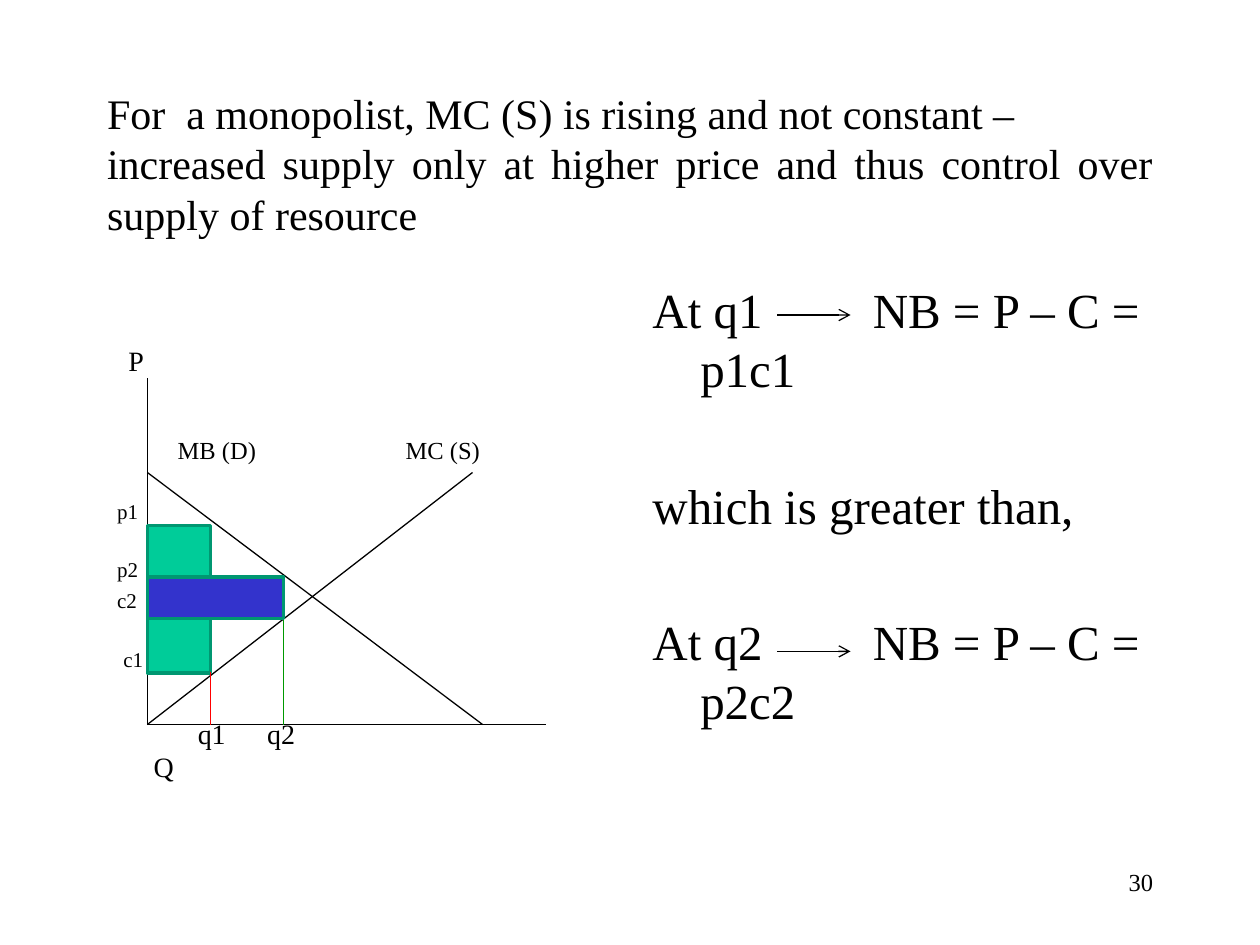
from lxml import etree
from pptx import Presentation, util as u
from pptx.dml.color import RGBColor
from pptx.enum import shapes, text
from pptx.oxml import ns

INK = {"black": "000000", "green": "009900", "red": "FF0000",
       "mint": "00CC99", "blue": "3333CC", "edge": "009771"}
LEFT, JUST, RIGHT = (text.PP_ALIGN.LEFT, text.PP_ALIGN.JUSTIFY,
                     text.PP_ALIGN.RIGHT)
TOP, MID = text.MSO_ANCHOR.TOP, text.MSO_ANCHOR.MIDDLE


def tint(name):
    """Return the named colour."""
    return RGBColor.from_string(INK[name])


def write(para, words, size=28, font="Times New Roman", ink="black", track=0):
    """Add a formatted run to a paragraph."""
    run = para.add_run()
    run.text = words
    run.font.size = u.Pt(size)
    run.font.name = font
    run.font.color.rgb = tint(ink)
    if track:
        run.font._element.set("spc", str(track * 100))


class Page:
    """Hold the line style and the current slide."""

    def __init__(self, deck, thin=0.75, thick=2):
        """Add a title-only slide to the deck."""
        self.slide = deck.slides.add_slide(deck.slide_layouts[5])
        self.thin, self.thick = u.Pt(thin), u.Pt(thick)

    def frame(self, shape, anchor=TOP, inset=(0.1, 0.05), wrap=True):
        """Set up and return the text frame of a shape."""
        frame = shape.text_frame
        frame.word_wrap = wrap
        frame.auto_size = text.MSO_AUTO_SIZE.NONE
        frame.vertical_anchor = anchor
        frame.margin_left = frame.margin_right = u.Inches(inset[0])
        frame.margin_top = frame.margin_bottom = u.Inches(inset[1])
        return frame

    def title(self, lines, box, size=24):
        """Place the title and write its lines."""
        shape = self.slide.shapes.title
        shape.left, shape.top, shape.width, shape.height = map(u.Inches, box)
        frame = self.frame(shape, MID)
        for i, line in enumerate(lines):
            para = frame.paragraphs[0] if i == 0 else frame.add_paragraph()
            para.alignment = JUST
            para.space_before = u.Pt(0)
            write(para, line, size)

    def box(self, spot, **style):
        """Add a text box and return its frame."""
        shape = self.slide.shapes.add_textbox(*map(u.Inches, spot))
        return self.frame(shape, **style)

    def label(self, words, x, y, size):
        """Add a one-line label centred on a height."""
        frame = self.box((x, y - 0.15, 0.7, 0.3), anchor=MID,
                         inset=(0, 0), wrap=False)
        frame.paragraphs[0].alignment = LEFT
        write(frame.paragraphs[0], words, size)

    def line(self, start, end, ink="black", arrow=False):
        """Draw a straight line, with an arrowhead if asked."""
        link = self.slide.shapes.add_connector(
            shapes.MSO_CONNECTOR.STRAIGHT, *map(u.Inches, start + end))
        link.line.color.rgb = tint(ink)
        link.line.width = self.thin
        if arrow:
            tail = etree.SubElement(link.line._get_or_add_ln(),
                                    ns.qn("a:tailEnd"))
            tail.set("type", "arrow")
        etree.SubElement(link._element.spPr, ns.qn("a:effectLst"))

    def block(self, spot, fill):
        """Draw a filled rectangle."""
        shape = self.slide.shapes.add_shape(
            shapes.MSO_SHAPE.RECTANGLE, *map(u.Inches, spot))
        shape.shadow.inherit = False
        shape.fill.solid()
        shape.fill.fore_color.rgb = tint(fill)
        shape.line.color.rgb = tint("edge")
        shape.line.width = self.thick


def graph(page):
    """Draw the supply and demand graph with its labels."""
    left, base = 1.17, 5.75
    zero = (left, base)
    page.line((left, 3), zero)
    page.line(zero, (4.33, base))
    page.line((left, 3.75), (3.83, base))
    page.line(zero, (3.75, 3.75))
    page.line((2.25, 4.58), (2.25, base), "green")
    page.block((left, 4.17, 0.5, 1.17), "mint")
    page.block((left, 4.58, 1.08, 0.33), "blue")
    page.line((1.67, 5.33), (1.67, base), "red")
    for words, x, y, size in (
            ("P", 1.02, 2.86, 16), ("MB (D)", 1.41, 3.57, 14),
            ("MC (S)", 3.22, 3.57, 14), ("p1", 0.93, 4.06, 12),
            ("p2", 0.93, 4.52, 12), ("c2", 0.93, 4.76, 12),
            ("c1", 0.98, 5.23, 12), ("q1", 1.57, 5.82, 16),
            ("q2", 2.12, 5.82, 16), ("Q", 1.22, 6.08, 16)):
        page.label(words, x, y, size)


def notes(page):
    """Write the net benefit at both amounts."""
    frame = page.box((5.08, 2.17, 4.17, 4.5))
    rows = (("At q1", "NB = P – C = p1c1"), ("which is greater than,",),
            ("At q2", "NB = P – C = p2c2"))
    for i, row in enumerate(rows):
        para = frame.paragraphs[0] if i == 0 else frame.add_paragraph()
        para.space_before = u.Pt(44.5 if i else 0)
        props = para._p.get_or_add_pPr()
        props.set("marL", str(u.Inches(0.38)))
        props.set("indent", str(u.Inches(-0.38)))
        write(para, row[0])
        for rest in row[1:]:
            write(para, " ", track=56)
            write(para, rest)
    for y in (2.5, 5.17):
        page.line((6.17, y), (6.75, y), arrow=True)


def main():
    """Build and save the slide."""
    deck = Presentation()
    deck.slide_width, deck.slide_height = u.Inches(10), u.Inches(7.5)
    page = Page(deck)
    page.title(("For  a monopolist, MC (S) is rising and not constant –",
                "increased supply only at higher price and thus control over "
                "supply of resource"), (0.75, 0.67, 8.5, 1.25))
    graph(page)
    notes(page)
    para = page.box((7.17, 6.83, 2.08, 0.5)).paragraphs[0]
    para.alignment = RIGHT
    write(para, "30", 14)
    deck.save("out.pptx")


if __name__ == "__main__":
    main()
